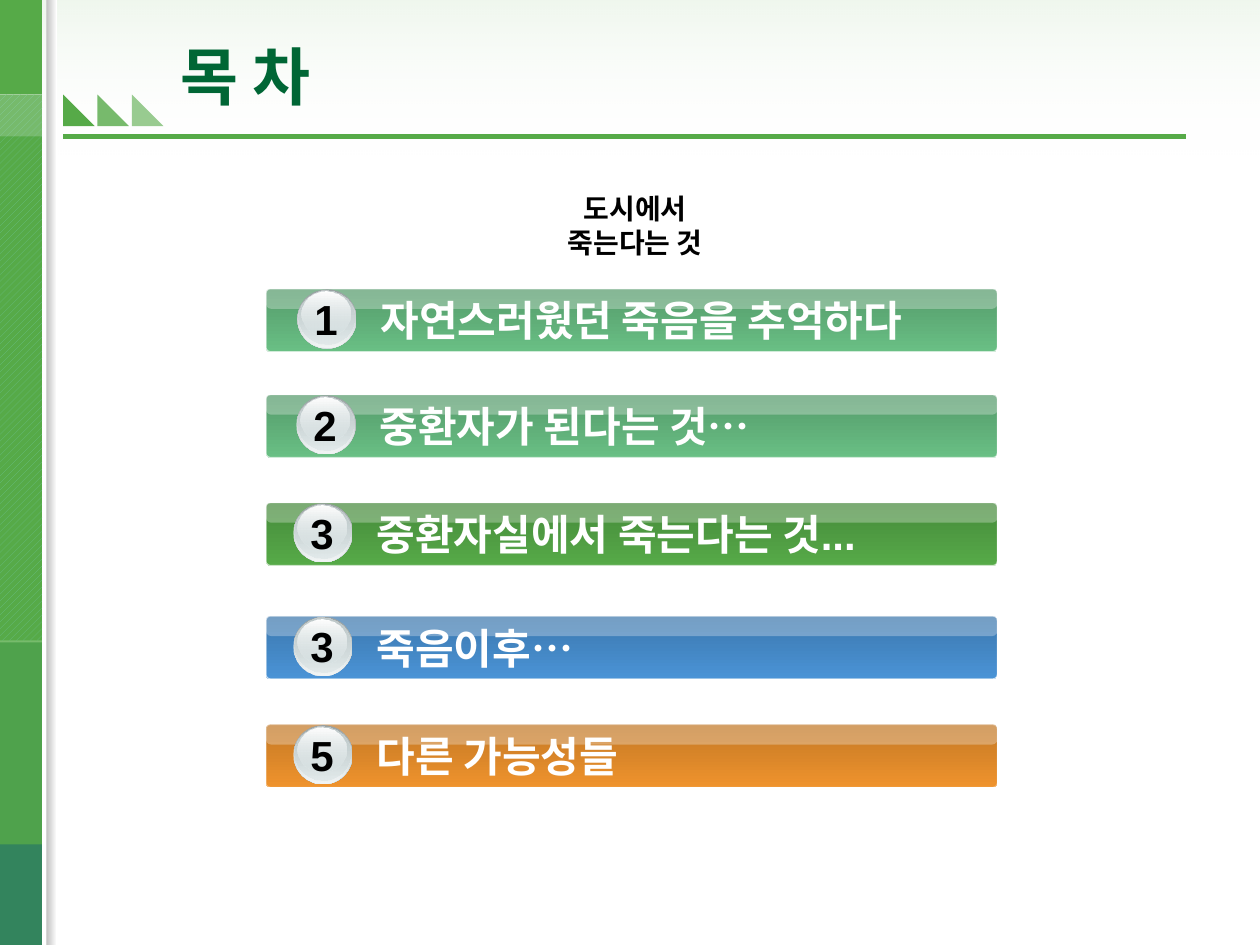
"""Build a Korean table-of-contents slide with five numbered, glossy chapter bars."""
import pptx
import pptx.dml.color
import pptx.enum.dml
import pptx.enum.shapes
import pptx.enum.text
import pptx.oxml.ns
import pptx.oxml.xmlchemy
import pptx.util
from lxml import etree

Pt = pptx.util.Pt
RGB = pptx.dml.color.RGBColor.from_string
qn = pptx.oxml.ns.qn
SHAPE = pptx.enum.shapes.MSO_SHAPE
ALIGN = pptx.enum.text.PP_ALIGN
COLORS = {
    "leaf": "56AA48", "forest": "006635", "mint": "69BF84", "moss": "559B6B",
    "fern": "468A3B", "navy": "3C78AE", "sky": "4A93D6", "rust": "C37825",
    "orange": "EF932D", "white": "FFFFFF", "black": "000000", "ice": "F7FDFF",
    "gloss": "F8F8F8", "gray": "C0C0C0", "steel": "99A1A2", "silver": "D6E1E2",
    "pearl": "F2F5F5", "ash": "C1CBCC",
}


def add_panel(kind, box, *stops, angle=270):
    """Add a borderless shape filled with one (color, opacity) stop or a gradient of two."""
    panel = slide.shapes.add_shape(kind, *map(Pt, box))
    panel.shadow.inherit = False
    panel.line.fill.background()
    if len(stops) == 1:
        panel.fill.solid()
        targets = [panel.fill.fore_color]
    else:
        panel.fill.gradient()
        panel.fill.gradient_angle = angle
        targets = [stop.color for stop in panel.fill.gradient_stops]
    for target, (color, _) in zip(targets, stops):
        target.rgb = RGB(COLORS[color])
    tints = panel._element.spPr.findall(".//" + qn("a:srgbClr"))
    for tint, (_, opacity) in zip(tints, stops):
        if opacity < 100:
            etree.SubElement(tint, qn("a:alpha"), val=str(opacity * 1000))
    return panel


def add_text(box, text, size, color, align):
    """Add a wrapped text box in bold Arial."""
    frame = slide.shapes.add_textbox(*map(Pt, box)).text_frame
    frame.word_wrap = True
    frame.text = text
    for paragraph in frame.paragraphs:
        paragraph.alignment = align
        paragraph.font.name = "Arial"
        paragraph.font.size = Pt(size)
        paragraph.font.bold = True
        paragraph.font.color.rgb = RGB(COLORS[color])


deck = pptx.Presentation()
deck.slide_width, deck.slide_height = Pt(720), Pt(540)
slide = deck.slides.add_slide(deck.slide_layouts[5])

add_panel(SHAPE.RECTANGLE, (0, 0, 720, 90), ("leaf", 10), ("white", 0))

rule = slide.shapes.add_connector(
    pptx.enum.shapes.MSO_CONNECTOR.STRAIGHT, Pt(36), Pt(78), Pt(678), Pt(78))
rule.line.color.rgb = RGB(COLORS["leaf"])
rule.line.width = Pt(3)
etree.SubElement(rule._element.spPr, qn("a:effectLst"))

add_panel(SHAPE.RECTANGLE, (0, 367, 24, 173), ("forest", 80))
add_panel(SHAPE.RECTANGLE, (0, 365, 24, 117.5), ("leaf", 80))
hatching = add_panel(SHAPE.RECTANGLE, (0, 54, 24, 312), ("leaf", 100))
hatching.fill.patterned()
hatching.fill.pattern = pptx.enum.dml.MSO_PATTERN.WIDE_UPWARD_DIAGONAL
hatching.fill.fore_color.rgb = RGB(COLORS["mint"])
hatching.fill.back_color.rgb = RGB(COLORS["leaf"])
add_panel(SHAPE.RECTANGLE, (0, 0, 24, 54), ("leaf", 100))
add_panel(SHAPE.RECTANGLE, (0, 54, 24, 24), ("ice", 20))
add_panel(SHAPE.RECTANGLE, (26.5, 0, 6, 540), ("gray", 100), ("white", 100), angle=0)

for step, opacity in enumerate((100, 80, 60)):
    add_panel(SHAPE.RIGHT_TRIANGLE, (36 + 19.7 * step, 54, 18, 18), ("leaf", opacity))

title = slide.shapes.title
title.left, title.top, title.width, title.height = map(Pt, (96, 18, 534, 50))
title.text_frame.text = "목 차"
title.text_frame.vertical_anchor = pptx.enum.text.MSO_ANCHOR.MIDDLE
heading = title.text_frame.paragraphs[0]
heading.alignment = ALIGN.LEFT
heading.font.name = "Arial"
heading.font.size = Pt(36)
heading.font.bold = True
heading.font.color.rgb = RGB(COLORS["forest"])
slide.shapes._spTree.append(title._element)

add_text((132, 106, 462, 46), "도시에서\n죽는다는 것", 16, "black", ALIGN.CENTER)

chapters = [
    ("1", "자연스러웠던 죽음을 추억하다", 165, 170, "moss", "mint", 70),
    ("2", "중환자가 된다는 것…", 225.5, 169.5, "moss", "mint", 70),
    ("3", "중환자실에서 죽는다는 것...", 287.2, 167.8, "fern", "leaf", 70),
    ("3", "죽음이후…", 352, 167.8, "navy", "sky", 70),
    ("5", "다른 가능성들", 414, 167.8, "rust", "orange", 40),
]
badge_layers = [
    (0, 0, 33.8, 33.8, ("steel", 100), ("silver", 100)),
    (0.2, 0.4, 33, 33, ("silver", 0), ("pearl", 100)),
    (0.7, 0.7, 31.7, 31, ("ash", 100), ("silver", 48)),
    (2.4, 1.4, 28, 25.2, ("white", 100), ("silver", 38)),
]
for number, label, top, badge_left, dark, light, edge_opacity in chapters:
    bar = add_panel(SHAPE.ROUNDED_RECTANGLE, (152, top, 418, 36), (dark, 100), (light, 100))
    bar.adjustments[0] = 0.07
    bar.line.color.rgb = RGB(COLORS["white"])
    bar.line.width = Pt(0.75)
    edge = bar._element.spPr.find(qn("a:ln")).find(".//" + qn("a:srgbClr"))
    etree.SubElement(edge, qn("a:alpha"), val=str(edge_opacity * 1000))
    gloss = add_panel(SHAPE.ROUNDED_RECTANGLE, (152, top, 418, 11.5), ("gloss", 30))
    gloss.adjustments[0] = 0.26
    add_text((badge_left + 40.4, top, 355, 36), label, 24, "white", ALIGN.LEFT)
    for dx, dy, width, height, upper, lower in badge_layers:
        add_panel(SHAPE.OVAL, (badge_left + dx, top + 0.4 + dy, width, height), upper, lower)
    add_text((badge_left + 0.8, top - 0.9, 31, 36), number, 24, "black", ALIGN.CENTER)

deck.save("out.pptx")
